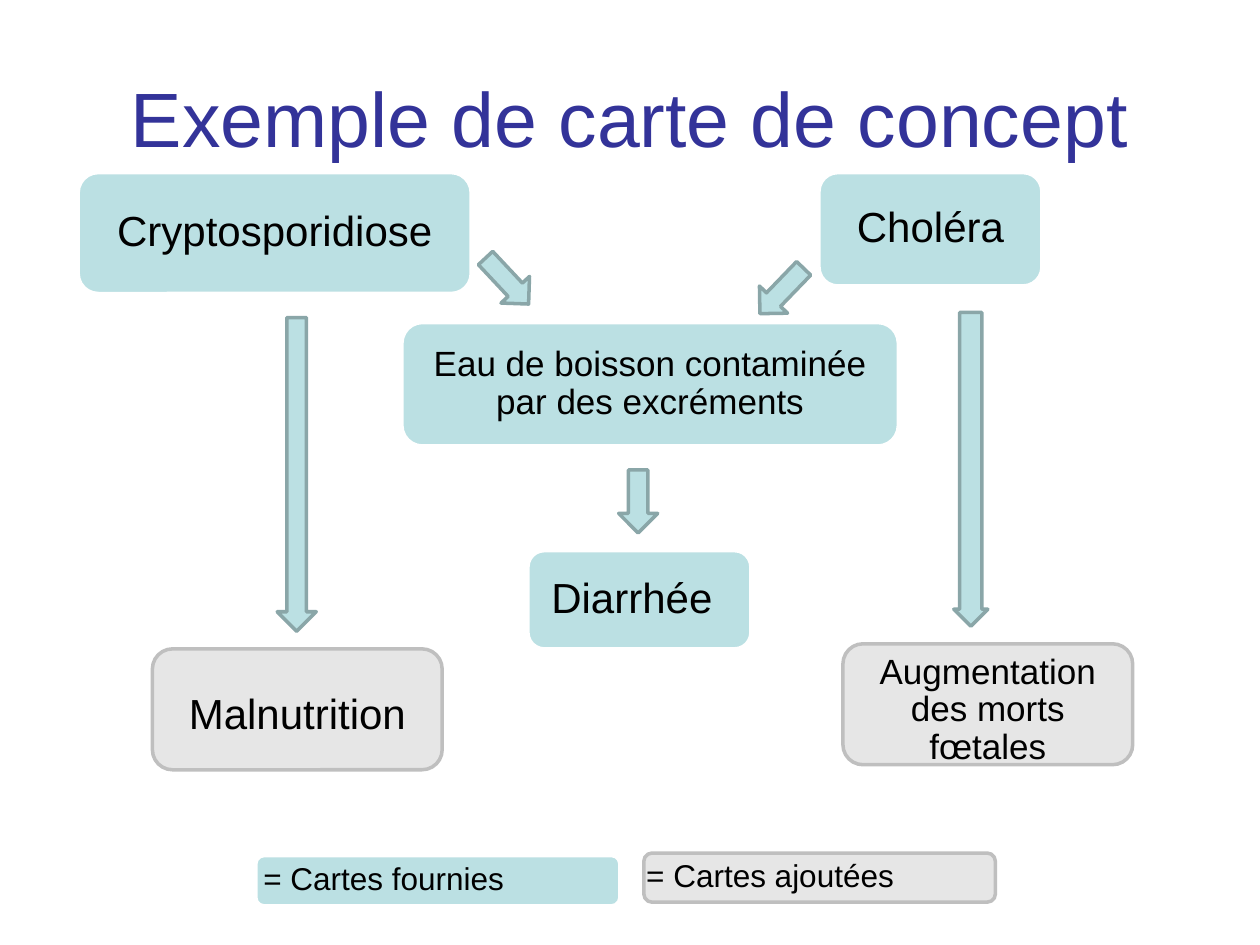
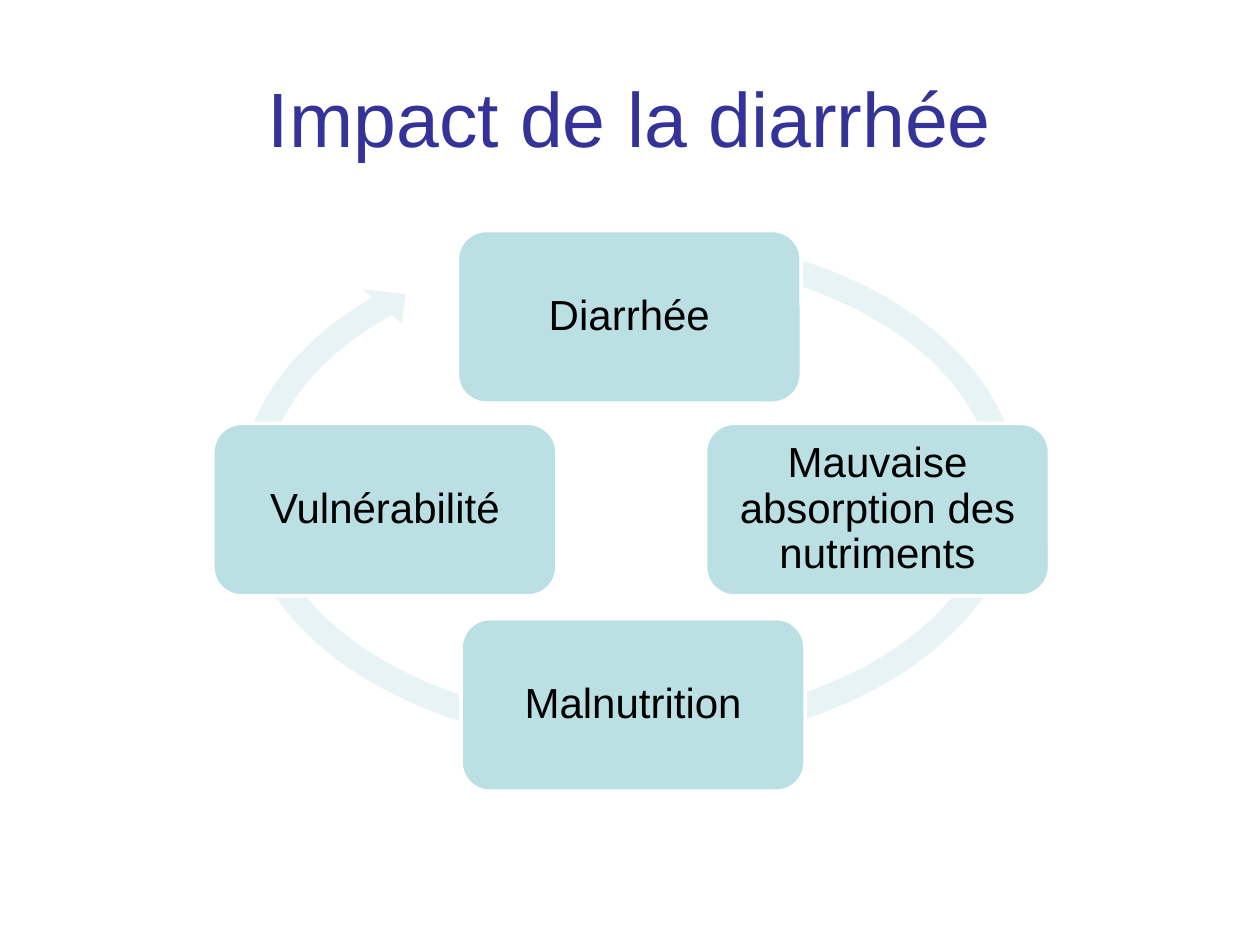
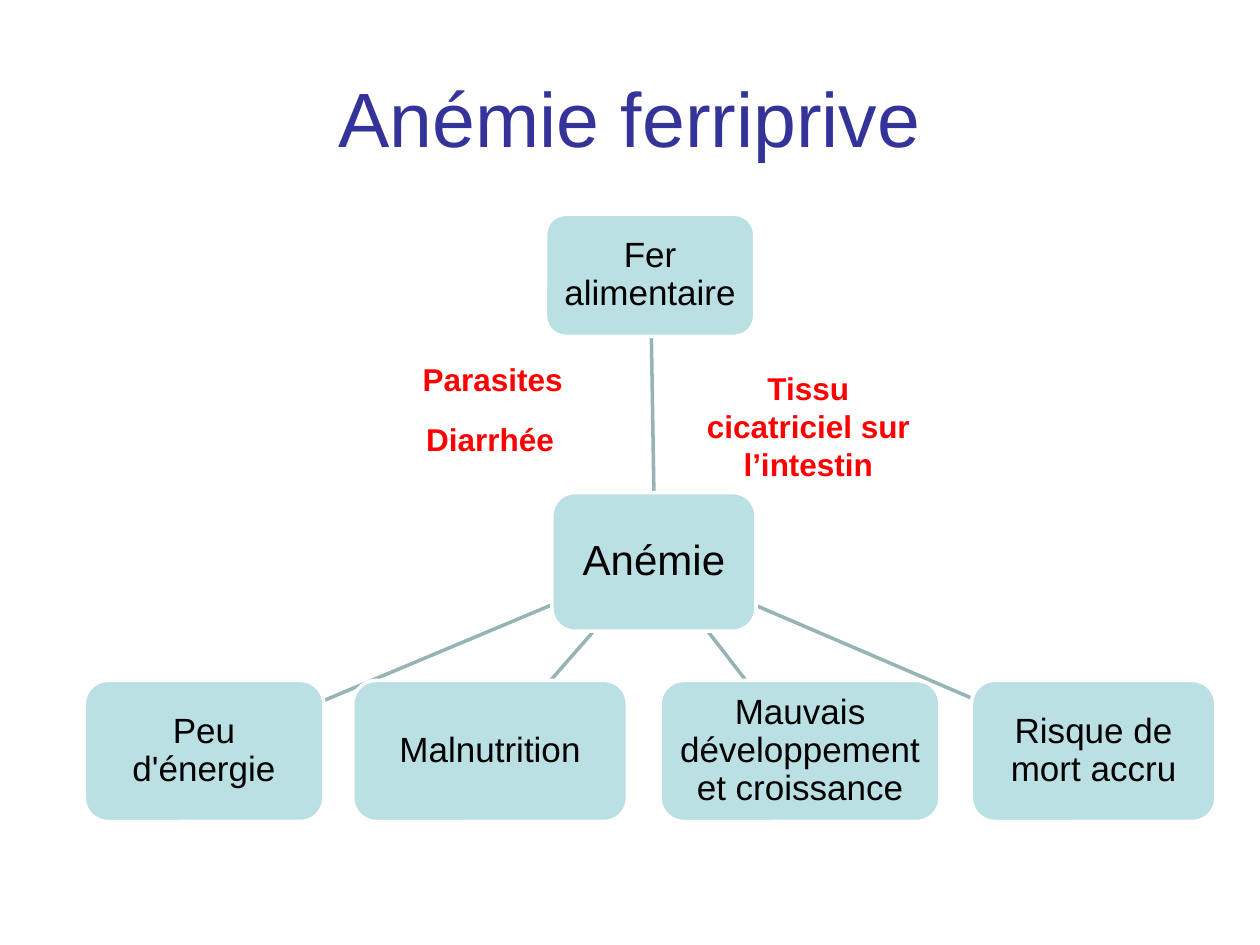
from dataclasses import dataclass

from pptx import Presentation
from pptx import util as u
from pptx.dml.color import RGBColor
from pptx.enum import shapes, text


@dataclass(frozen=True)
class Theme:
    face: str = "Arial"
    title: str = "333399"
    ink: str = "000000"
    alert: str = "FF0000"
    white: str = "FFFFFF"
    aqua: str = "BBE0E3"
    pale: str = "E7F3F4"
    edge: str = "8AA6A8"
    link: str = "96B3B6"
    grey: str = "E6E6E6"
    rim: str = "BFBFBF"
    head: int = 44
    large: int = 24
    mid: int = 20
    small: int = 18
    stroke: int = 2


T = Theme()
KIND = shapes.MSO_SHAPE
ALIGN = text.PP_ALIGN
GIVEN = (T.aqua, T.white)
ADDED = (T.grey, T.rim)

# Grid of 100 columns by 75 rows
CELL = u.Inches(0.1)
COLS, ROWS = 100, 75


def draw(page, kind, at, fill, line=None):
    form = page.shapes.add_shape(kind, *(round(n * CELL) for n in at))
    form.shadow.inherit = False
    form.fill.solid()
    form.fill.fore_color.rgb = RGBColor.from_string(fill)
    if line:
        form.line.color.rgb = RGBColor.from_string(line)
        form.line.width = u.Pt(T.stroke)
    else:
        form.line.fill.background()
    return form


def write(form, words, size, tint=T.ink, bold=False, align=ALIGN.CENTER,
          space=0.9, pad=1.0, shift=(0, 0)):
    """Centre the words in the form, moved by shift in columns and rows."""
    right, down = shift
    frame = form.text_frame
    frame.word_wrap = True
    frame.auto_size = text.MSO_AUTO_SIZE.NONE
    frame.vertical_anchor = text.MSO_ANCHOR.MIDDLE
    frame.margin_left = round((pad + right) * CELL)
    frame.margin_right = round((pad - right) * CELL)
    frame.margin_top = round(2 * down * CELL)
    frame.margin_bottom = 0
    para = frame.paragraphs[0]
    para.text = words
    para.alignment = align
    para.line_spacing = space
    para.font.name = T.face
    para.font.size = u.Pt(size)
    para.font.bold = bold
    para.font.color.rgb = RGBColor.from_string(tint)


deck = Presentation()
deck.slide_width, deck.slide_height = COLS * CELL, ROWS * CELL

# Pages with their titles
pages = []
for words in ("Exemple de carte de concept", "Impact de la diarrhée",
              "Anémie ferriprive"):
    page = deck.slides.add_slide(deck.slide_layouts[6])
    title = page.shapes.add_textbox(5 * CELL, 3 * CELL, 90 * CELL, round(12.5 * CELL))
    write(title, words, T.head, T.title, space=1.0)
    pages.append(page)
map_page, loop_page, tree_page = pages

# Concept map: cards
for words, at, size, look, shift in (
    ("Eau de boisson contaminée par des excréments",
     (31.9, 25.6, 39.4, 9.8), T.mid, GIVEN, (0, 0)),
    ("Choléra", (65, 13.7, 17.7, 9), T.large, GIVEN, (0, 0)),
    ("Diarrhée", (41.9, 43.7, 17.7, 7.8), T.large, GIVEN, (-0.6, 0)),
    ("Cryptosporidiose", (6.2, 13.7, 31.2, 9.6), T.large, GIVEN, (0, 0)),
    ("Malnutrition", (12.1, 51.5, 23, 9.6), T.large, ADDED, (0, 0.5)),
    ("Augmentation des morts fœtales",
     (66.9, 51.1, 23, 9.6), T.mid, ADDED, (0, 0.5)),
):
    card = draw(map_page, KIND.ROUNDED_RECTANGLE, at, *look)
    write(card, words, size, shift=shift)

# Concept map: arrows
for at, turn, shaft in (
    ((22, 25.2, 3.1, 24.9), 0, 0.5),
    ((75.7, 24.8, 2.7, 24.9), 0, 0.65),
    ((38.7, 19.8, 3.1, 5), 316.9, 0.5),
    ((60.5, 20.6, 3.1, 5), 44, 0.5),
    ((49.1, 37.3, 3.1, 5), 0, 0.5),
):
    arrow = draw(map_page, KIND.DOWN_ARROW, at, T.aqua, T.edge)
    arrow.rotation = turn
    arrow.adjustments[0] = shaft

# Concept map: legend
for words, at, look, right in (
    ("= Cartes ajoutées", (51.1, 67.7, 27.9, 3.9), ADDED, -1),
    ("= Cartes fournies", (20.3, 67.9, 28.9, 4), GIVEN, -0.6),
):
    key = draw(map_page, KIND.ROUNDED_RECTANGLE, at, *look)
    write(key, words, T.small, align=ALIGN.LEFT, shift=(right, 0))

# Cycle: ring, then the four stages
ring = draw(loop_page, KIND.CIRCULAR_ARROW, (18, 17.5, 63.9, 42.8), T.pale)
for spot, value in enumerate((0.047, 2.729, 129.974, 179.187, 0.048)):
    ring.adjustments[spot] = value
for words, left, top in (
    ("Diarrhée", 36.3, 18.3),
    ("Mauvaise absorption des nutriments", 56, 33.6),
    ("Malnutrition", 36.6, 49.1),
    ("Vulnérabilité", 16.9, 33.6),
):
    stage = draw(loop_page, KIND.ROUNDED_RECTANGLE, (left, top, 27.3, 13.7), *GIVEN)
    write(stage, words, T.large)

# Tree: links
for ends in (
    (51.9, 39.1, 51.7, 26.7),
    (43.8, 48, 25.7, 55.6),
    (47.2, 50, 43.7, 54),
    (56.1, 50, 59.2, 54),
    (60.1, 48.1, 77.1, 55.4),
):
    link = tree_page.shapes.add_connector(
        shapes.MSO_CONNECTOR.STRAIGHT, *(round(n * CELL) for n in ends))
    link.line.color.rgb = RGBColor.from_string(T.link)
    link.line.width = u.Pt(T.stroke)
    props = link._element.spPr
    props.append(props.makeelement(
        "{http://schemas.openxmlformats.org/drawingml/2006/main}effectLst", {}))

# Tree: cause, illness and the row of effects
effects = [(words, (left, 54, width, 11.2), T.mid) for words, left, width in (
    ("Peu d'énergie", 6.7, 19),
    ("Malnutrition", 28, 21.8),
    ("Mauvais développement et croissance", 52.4, 22.2),
    ("Risque de mort accru", 77.1, 19.4),
)]
for words, at, size in [
    ("Anémie", (43.8, 39.1, 16.2, 11), T.large),
    ("Fer alimentaire", (43.3, 17, 16.6, 9.7), T.mid),
] + effects:
    node = draw(tree_page, KIND.ROUNDED_RECTANGLE, at, *GIVEN)
    write(node, words, size, pad=0.6)

# Tree: factors beside the trunk
for words, at in (
    ("Diarrhée", (26.4, 32.8, 25, 4)),
    ("Tissu cicatriciel sur l’intestin", (54.7, 28.8, 18.9, 10)),
    ("Parasites", (29.5, 28.1, 19.2, 4)),
):
    note = tree_page.shapes.add_textbox(*(round(n * CELL) for n in at))
    write(note, words, T.small, T.alert, bold=True, space=1.0)

deck.save("out.pptx")
